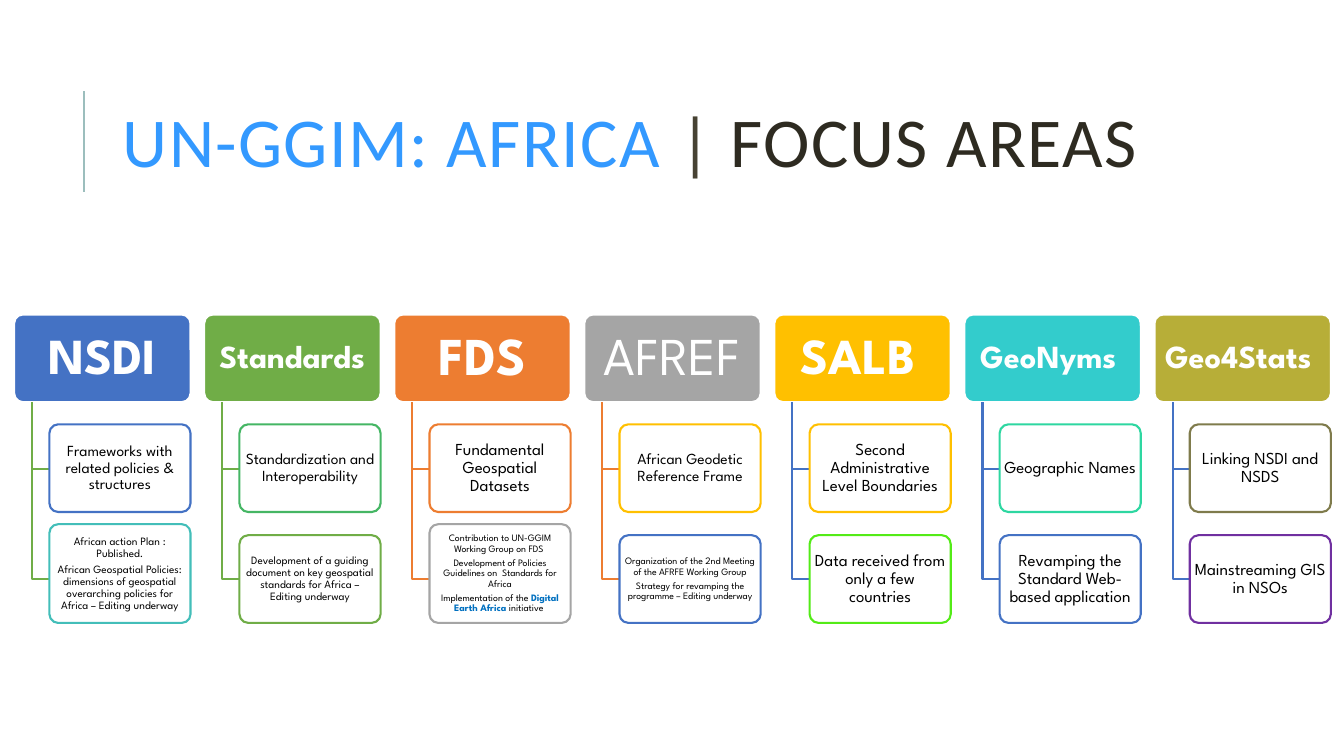
"""Builds the slide of the seven UN-GGIM: Africa focus areas."""
from dataclasses import dataclass

from lxml import etree
from pptx import Presentation
from pptx import util as u
from pptx.dml.color import RGBColor
from pptx.enum import shapes, text
from pptx.oxml import ns

FIRST_LEFT, PITCH = 0.14, 1.885
HEAD_TOP, HEAD_WIDTH, HEAD_HEIGHT = 3.12, 1.75, 0.87
STEM, INDENT = 0.17, 0.35
DETAIL_WIDTH, CORNER = 1.4, 0.0875
SCOPE_TOP, STATUS_BOTTOM = 4.21, 6.18
SCOPE_MIDDLE, STATUS_MIDDLE = 4.65, 5.74


def rgb(code):
    return RGBColor.from_string(code)


def write(paragraph, words, font="League Spartan", size=12, color="000000", bold=False, spacing=None):
    run = paragraph.add_run()
    run.text = words
    run.font.name, run.font.size, run.font.bold = font, u.Pt(size), bold
    run.font.color.rgb = rgb(color)
    if spacing:
        run._r.get_or_add_rPr().set("spc", str(spacing))


@dataclass
class FocusSlide:
    slide: object
    line_width: float = 1.5

    def stroke(self, line, color):
        line.color.rgb = rgb(color)
        line.width = u.Pt(self.line_width)

    def rule(self, x, top, bottom, color):
        rule = self.slide.shapes.add_connector(
            shapes.MSO_CONNECTOR.STRAIGHT, u.Inches(x), u.Inches(bottom), u.Inches(x), u.Inches(top))
        self.stroke(rule.line, color)
        etree.SubElement(rule._element.spPr, ns.qn("a:effectLst"))

    def title(self, left, top, width, height, parts):
        title = self.slide.shapes.add_textbox(*map(u.Inches, (left, top, width, height)))
        frame = title.text_frame
        frame.word_wrap = True
        frame.vertical_anchor = text.MSO_ANCHOR.MIDDLE
        frame.paragraphs[0].line_spacing = 0.8
        for words, color in parts:
            write(frame.paragraphs[0], words, font="Calibri", size=50, color=color, spacing=100)

    def branch(self, x, top, bottom, color):
        path = [(x, bottom), (x + STEM, bottom)]
        builder = self.slide.shapes.build_freeform(u.Inches(x), u.Inches(top))
        builder.add_line_segments([(u.Inches(a), u.Inches(b)) for a, b in path], close=False)
        branch = builder.convert_to_shape()
        branch.shadow.inherit = False
        branch.fill.background()
        self.stroke(branch.line, color)

    def card(self, left, top, width, height, paragraphs, size, fill="FFFFFF", outline="FFFFFF",
             color="000000", bold=False, inset=0.02):
        card = self.slide.shapes.add_shape(
            shapes.MSO_SHAPE.ROUNDED_RECTANGLE, *map(u.Inches, (left, top, width, height)))
        card.adjustments[0] = CORNER / height
        card.shadow.inherit = False
        card.fill.solid()
        card.fill.fore_color.rgb = rgb(fill)
        self.stroke(card.line, outline)
        frame = card.text_frame
        frame.word_wrap = True
        frame.vertical_anchor = text.MSO_ANCHOR.MIDDLE
        frame.margin_left = frame.margin_right = u.Inches(inset)
        frame.margin_top = frame.margin_bottom = u.Inches(inset)
        for index, runs in enumerate(paragraphs):
            paragraph = frame.paragraphs[0] if index == 0 else frame.add_paragraph()
            paragraph.alignment = text.PP_ALIGN.CENTER
            paragraph.line_spacing = 0.9
            if index < len(paragraphs) - 1:
                paragraph.space_after = u.Pt(size * 0.35)
            for words, style in runs:
                write(paragraph, words, **{"size": size, "color": color, "bold": bold, **style})

    def area(self, left, heading, branch_color, scope, status):
        words, size, fill, bold = heading
        self.card(left, HEAD_TOP, HEAD_WIDTH, HEAD_HEIGHT, [words], size, fill=fill,
                  color="FFFFFF", bold=bold, inset=0.04)
        stem = left + INDENT - STEM
        head_bottom = HEAD_TOP + HEAD_HEIGHT
        scope_words, scope_size, scope_color = scope
        self.branch(stem, head_bottom, SCOPE_MIDDLE, branch_color)
        self.card(left + INDENT, SCOPE_TOP, DETAIL_WIDTH, HEAD_HEIGHT, plain(scope_words),
                  scope_size, outline=scope_color)
        paragraphs, status_size, status_color, height = status
        self.branch(stem, head_bottom, STATUS_MIDDLE, branch_color)
        self.card(left + INDENT, STATUS_BOTTOM - height, DETAIL_WIDTH, height, paragraphs,
                  status_size, outline=status_color)


def plain(*lines):
    return [[(line, {})] for line in lines]


AREAS = [
    (([("NSDI", {})], 36, "4472C4", True), "70AD47",
     ("Frameworks with related policies & structures", 11, "4472C4"),
     (plain("African action Plan : Published.",
            "African Geospatial Policies: dimensions of geospatial overarching policies for Africa"
            " – Editing underway"), 8, "43BEB9", 0.98)),
    (([("Standards", {})], 23, "70AD47", True), "70AD47",
     ("Standardization and Interoperability", 11, "45B664"),
     (plain("Development of a guiding document on key geospatial standards for Africa"
            " – Editing underway"), 8, "70AD47", 0.87)),
    (([("FDS", {})], 38, "ED7D31", True), "ED7D31",
     ("Fundamental Geospatial Datasets", 12, "ED7D31"),
     (plain("Contribution to UN-GGIM Working Group on FDS ",
            "Development of Policies Guidelines on  Standards for Africa")
      + [[("Implementation of the ", {}),
          ("Digital Earth Africa ", {"color": "0070C0", "bold": True}),
          ("initiative ", {})]], 7, "A5A5A5", 0.98)),
    (([("AFREF", {})], 38, "A5A5A5", False), "ED7D31",
     ("African Geodetic Reference Frame", 11, "FFC000"),
     (plain("Organization of the 2nd Meeting of the AFRFE Working Group",
            "Strategy for revamping the programme – Editing underway"), 7, "4472C4", 0.87)),
    (([("SALB", {}), (" ", {"size": 23})], 36, "FFC000", True), "4472C4",
     ("Second Administrative Level Boundaries", 12, "FFC000"),
     (plain("Data received from only a few countries"), 12, "53EB17", 0.87)),
    (([("GeoNyms ", {})], 23, "33CCCC", True), "4472C4",
     ("Geographic Names", 12, "2ED7A1"),
     (plain("Revamping the Standard Web-based application"), 12, "4472C4", 0.87)),
    (([("Geo4Stats ", {})], 23, "B7AE38", True), "4472C4",
     ("Linking NSDI and NSDS", 12, "7F7B4C"),
     (plain("Mainstreaming GIS in NSOs"), 12, "7030A0", 0.87)),
]


def main():
    deck = Presentation()
    deck.slide_width, deck.slide_height = u.Inches(13.33), u.Inches(7.5)
    focus = FocusSlide(deck.slides.add_slide(deck.slide_layouts[6]))
    focus.rule(0.83, 0.9, 1.9, "9CBEBD")
    focus.title(1.12, 0.64, 10.63, 1.64, [
        ("UN-GGIM: AFRICA", "3399FF"), (" | ", "474233"), ("FOCUS AREAS", "2E2B21")])
    for column, area in enumerate(AREAS):
        focus.area(FIRST_LEFT + column * PITCH, *area)
    deck.save("out.pptx")


if __name__ == "__main__":
    main()
